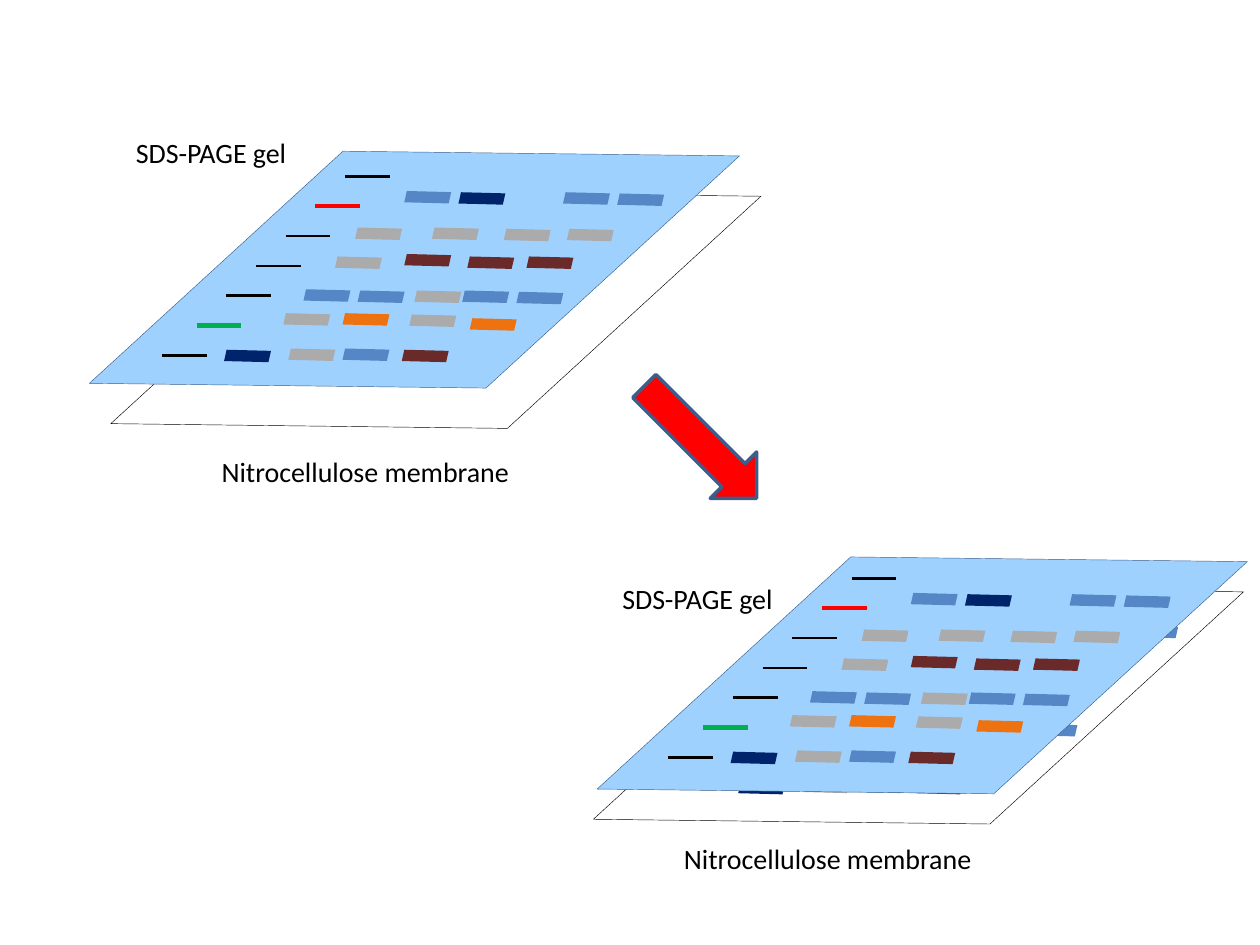
import collections
import pptx
import pptx.util
import pptx.dml.color
import pptx.enum.shapes
import pptx.enum.text
import pptx.oxml.ns
import lxml.etree

Box = collections.namedtuple("Box", "left top width height")
CELL = pptx.util.Inches(0.1)
COLUMNS, ROWS = 100, 75
THEME = {
    "font": "Calibri", "label_size": 16, "hairline": 0.25, "arrow_line": 2,
    "black": "000000", "white": "FFFFFF", "red": "FF0000", "green": "00B050",
    "gel": "9FD1FF", "outline": "3A5F8C", "blue": "5586C5", "navy": "00246B",
    "grey": "ABABAB", "maroon": "6B2A2A", "orange": "EE720F",
}
SHEET_CORNERS = [(0.39, 0), (1, 0.02), (0.61, 1), (0, 0.98)]
LADDER = [("black", 1.5), ("red", 2.25), ("black", 1.5), ("black", 1.5),
          ("black", 1.5), ("green", 3), ("black", 1.5)]
BANDS = [
    ("blue", 25.1, 3.1), ("navy", 29.4, 3.2), ("blue", 37.7, 3.2), ("blue", 42, 3.3),
    ("grey", 21.2, 6), ("grey", 27.3, 6), ("grey", 33, 6.1), ("grey", 38, 6.1),
    ("grey", 19.6, 8.3), ("maroon", 25.1, 8.1), ("maroon", 30.1, 8.3), ("maroon", 34.8, 8.3),
    ("blue", 17.1, 10.9), ("blue", 21.4, 11), ("grey", 25.9, 11), ("blue", 29.7, 11),
    ("blue", 34, 11.1),
    ("grey", 15.5, 12.8), ("orange", 20.2, 12.8), ("grey", 25.5, 12.9), ("orange", 30.3, 13.2),
    ("navy", 10.8, 15.7), ("grey", 15.9, 15.6), ("blue", 20.2, 15.6), ("maroon", 24.9, 15.7),
]


def cells(*values):
    return [round(value * CELL) for value in values]


def colour(name):
    return pptx.dml.color.RGBColor.from_string(THEME[name])


def set_all(target, values):
    for name, value in values.items():
        setattr(target, name, value)


def paint(shape, fill, line, width):
    shape.shadow.inherit = False
    shape.fill.solid()
    shape.fill.fore_color.rgb = colour(fill)
    shape.line.color.rgb = colour(line)
    shape.line.width = pptx.util.Pt(width)


def add_sheet(page, box, fill, line):
    points = [cells(box.left + x * box.width, box.top + y * box.height)
              for x, y in SHEET_CORNERS]
    builder = page.shapes.build_freeform(*points[0])
    builder.add_line_segments(points[1:], close=True)
    paint(builder.convert_to_shape(), fill, line, THEME["hairline"])


def add_ladder(page, box):
    for step, (name, width) in enumerate(LADDER):
        last_shift = 0.4 if step == len(LADDER) - 1 else 0
        left = box.left + 20.3 - 2.36 * step - last_shift
        top = box.top + 2 + 2.37 * step
        rung = page.shapes.add_connector(
            pptx.enum.shapes.MSO_CONNECTOR.STRAIGHT, *cells(left, top, left + 3.55, top))
        rung.line.color.rgb = colour(name)
        rung.line.width = pptx.util.Pt(width)
        properties = rung._element.spPr
        lxml.etree.SubElement(properties, pptx.oxml.ns.qn("a:effectLst"))


def add_bands(page, box):
    for name, left, top in BANDS:
        band = page.shapes.add_shape(
            pptx.enum.shapes.MSO_SHAPE.PARALLELOGRAM,
            *cells(box.left + left - 0.1, box.top + top + 0.1, 3.7, 0.9))
        band.adjustments[0] = 0.2
        band.rotation = 1.5
        paint(band, name, "outline", THEME["hairline"])
        band.line.fill.background()


def add_label(page, box, text):
    label = page.shapes.add_textbox(*cells(*box))
    set_all(label.text_frame, {
        "word_wrap": False,
        "auto_size": pptx.enum.text.MSO_AUTO_SIZE.SHAPE_TO_FIT_TEXT,
    })
    span = label.text_frame.paragraphs[0].add_run()
    span.text = text
    set_all(span.font, {"name": THEME["font"], "size": pptx.util.Pt(THEME["label_size"])})
    span.font.color.rgb = colour("black")


def add_membrane(page, box, label_box, band_box=None):
    add_sheet(page, box, "white", "black")
    add_label(page, label_box, "Nitrocellulose membrane")
    if band_box:
        add_ladder(page, band_box)
        add_bands(page, band_box)


def add_gel(page, box, label_box, band_box):
    add_sheet(page, box, "gel", "outline")
    add_label(page, label_box, "SDS-PAGE gel")
    add_ladder(page, band_box)
    add_bands(page, band_box)


def add_transfer_arrow(page, box):
    arrow = page.shapes.add_shape(pptx.enum.shapes.MSO_SHAPE.DOWN_ARROW, *cells(*box))
    arrow.rotation = 315
    paint(arrow, "red", "outline", THEME["arrow_line"])


def sheet_box(left, top):
    return Box(left, top, 51.6, 18.8)


def main():
    deck = pptx.Presentation()
    set_all(deck, {"slide_width": COLUMNS * CELL, "slide_height": ROWS * CELL})
    page = deck.slides.add_slide(deck.slide_layouts[6])
    before = sheet_box(7.1, 12)
    after = sheet_box(47.4, 44.2)
    add_membrane(page, sheet_box(8.8, 15.2), Box(16.6, 35.6, 25.1, 3.7))
    add_gel(page, before, Box(9.8, 10.3, 14.1, 3.7), before)
    add_transfer_arrow(page, Box(53, 28.8, 5.2, 12.6))
    add_membrane(page, sheet_box(47.1, 46.6), Box(53.3, 66.3, 25.1, 3.7),
                 sheet_box(47.9, 46.3))
    add_gel(page, after, Box(48.4, 45.7, 14.1, 3.7), sheet_box(47.3, 43.9))
    deck.save("out.pptx")


if __name__ == "__main__":
    main()
